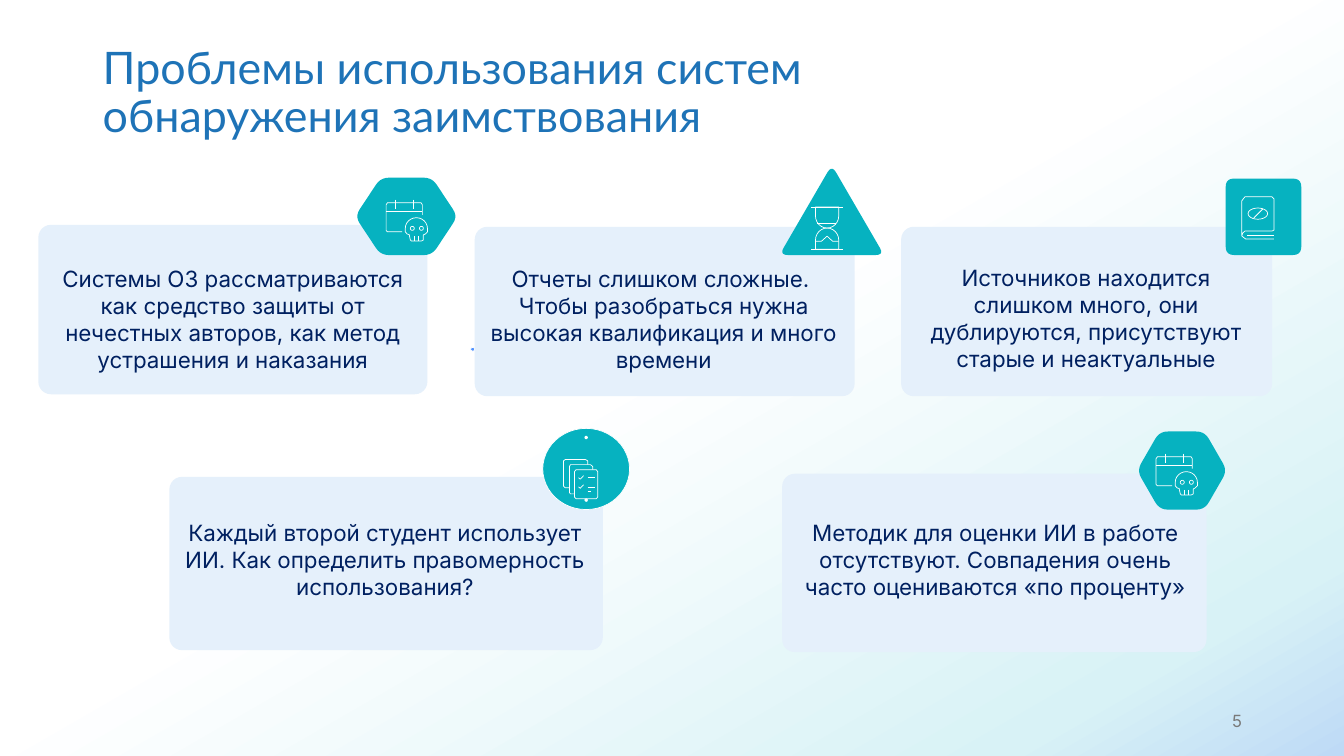
from dataclasses import dataclass
from math import cos, dist, radians, sin
from typing import NamedTuple

from pptx import Presentation
from pptx.dml.color import RGBColor
from pptx.enum.shapes import MSO_SHAPE
from pptx.enum.text import MSO_ANCHOR, PP_ALIGN
from pptx.oxml import parse_xml
from pptx.oxml.ns import nsdecls
from pptx.util import Pt

Point = tuple[float, float]
Stroke = list[Point]


@dataclass(frozen=True)
class Theme:
    title: str = "1E73B7"
    text: str = "002060"
    card: str = "E5F0FB"
    badge: str = "06B2C0"
    dot: str = "4F92FF"
    number: str = "797979"
    white: str = "FFFFFF"
    title_font: str = "Lato"
    body_font: str = "Inter"
    title_size: float = 32
    body_size: float = 16
    number_size: float = 12
    line: float = 0.5
    # position in percent, colour, opacity in percent
    gradient: tuple = ((48, "FFFFFF", 100), (87, "D8F2F6", 71), (100, "BEDAF6", 100))
    gradient_angle: int = 60


class Box(NamedTuple):
    x: float
    y: float
    w: float
    h: float


@dataclass(frozen=True)
class Card:
    box: Box
    text_box: Box
    lines: tuple[str, ...]
    badge: str
    badge_box: Box
    icon: str
    icon_at: Point


def arc(cx: float, cy: float, rx: float, ry: float, start: int = 0, end: int = 360) -> Stroke:
    """Points of an elliptic arc, angles in degrees clockwise from the right."""
    step = 15 if end > start else -15
    return [(cx + rx * cos(radians(a)), cy + ry * sin(radians(a)))
            for a in range(start, end + step, step)]


THEME = Theme()
CORNER = 6
CARD_RADIUS = 9

# Corner points as fractions of the badge box; rounding pulls the tips back inside
BADGES: dict[str, Stroke] = {
    "hexagon": [(-0.02, 0.5), (0.24, 0), (0.76, 0), (1.02, 0.5), (0.76, 1), (0.24, 1)],
    "triangle": [(0.5, -0.04), (1.03, 1), (-0.03, 1)],
    "square": [(0, 0), (1, 0), (1, 1), (0, 1)],
}

ICONS: dict[str, list[Stroke]] = {
    "calendar": [
        [(11.5, 23), (1, 23), (0, 22), (0, 3.6), (1, 2.2), (24.9, 2.2), (25.9, 3.6), (25.9, 10.8)],
        *([(x, 0), (x, 6.5)] for x in (6.5, 19.4)),
        [(0, 8.6), (25.9, 8.6)],
        *(arc(x, 20.5, 1.4, 1.4) for x in (18.7, 25.2)),
        *([(x, 25.9), (x, 29.5)] for x in (20.2, 23)),
        arc(21.6, 20.5, 7.9, 7.6, 0, -180)
        + [(13.7, 23), (15, 24.5), (16.5, 25), (17.3, 28.8), (18, 29.5), (25.2, 29.5),
           (26.6, 28.8), (26.6, 25.2), (28, 24.5), (29.5, 23), (29.5, 20.5)],
    ],
    "hourglass": [
        arc(11.2, 6.5, 8.3, 8.6, 0, 180) + [(2.9, 0), (19.5, 0), (19.5, 6.5)],
        arc(11.2, 23.7, 8.3, 8.6, 0, -180) + [(2.9, 30.2), (19.5, 30.2), (19.5, 23.7)],
        *([(0, y), (22.3, y)] for y in (0, 30.2)),
        [(19.4, 24.5), (15.1, 24.5), (11.2, 20.9), (7.2, 24.5), (2.9, 24.5)],
        [(4.3, 11.5), (17.3, 11.5)],
    ],
    "book": [
        [(23, 30.2), (2.9, 30.2), (0, 28), (0.7, 25.9), (2.2, 24.5), (21.6, 24.5), (23, 23.8),
         (23, 1.4), (21.6, 0), (2.2, 0), (0, 2.9), (0, 27.4)],
        [(3.6, 27.4), (23, 27.4)],
        arc(11.5, 12, 7, 4),
        [(8.6, 15.1), (15.1, 8.6)],
    ],
    "checklists": [
        [(4.3, 20.2), (1.4, 20.2), (0, 19), (0, 0.9), (1.3, 0), (15.8, 0), (17.3, 0.9), (17.3, 3.6)],
        [(7.9, 24.5), (5, 24.5), (4.3, 23.5), (4.3, 5), (5, 3.6), (19.4, 3.6), (20.9, 5), (20.9, 7.2)],
        [(9, 7.2), (23.4, 7.2), (24.5, 8.6), (24.5, 26.7), (23.4, 28), (9, 28), (7.9, 26.7),
         (7.9, 8.6), (9, 7.2)],
        *([(10.8, y), (12, y + 1), (14.4, y - 1.5)] for y in (13, 19.5)),
        *([(17.3, y), (x, y)] for x, y in ((22.3, 13), (22.3, 19.5), (19.4, 23))),
    ],
}

CARDS = [
    Card(Box(27.4, 160.6, 277.9, 121), Box(33.1, 189.4, 266.4, 77.8),
         ("Системы ОЗ рассматриваются как средство защиты от нечестных авторов, "
          "как метод устрашения и наказания",),
         "hexagon", Box(255, 126.9, 70.5, 55.3), "calendar", (275.8, 142.6)),
    Card(Box(339.1, 162, 271.4, 121), Box(346.3, 189.4, 255.6, 79.9),
         ("Отчеты слишком сложные. ",
          "Чтобы разобраться нужна высокая квалификация и много времени"),
         "triangle", Box(558.9, 120.4, 70.5, 61.8), "hourglass", (579.6, 147.8)),
    Card(Box(643.7, 162, 265, 121), Box(650.9, 188.6, 249.8, 77.8),
         ("Источников находится слишком много, они дублируются, присутствуют "
          "старые и неактуальные",),
         "square", Box(875.5, 127.6, 54, 54.6), "book", (887, 140.6)),
    Card(Box(121, 340.6, 309.6, 123.8), Box(123.1, 370.8, 303.8, 58.3),
         ("Каждый второй студент использует ИИ. Как определить правомерность "
          "использования?",),
         "circle", Box(387.7, 306, 62, 58), "checklists", (402.5, 328.3)),
    Card(Box(558.7, 338.4, 303.1, 127.4), Box(566.6, 370.8, 288.7, 90.7),
         ("Методик для оценки ИИ в работе отсутствуют. Совпадения очень часто "
          "оцениваются «по проценту»",),
         "hexagon", Box(813.4, 308.2, 61.9, 55.8), "calendar", (825.8, 324)),
]


def rgb(color: str) -> RGBColor:
    return RGBColor.from_string(color)


def style(sp, fill: str | None = None, line: str | None = None) -> None:
    sp.shadow.inherit = False
    if fill:
        sp.fill.solid()
        sp.fill.fore_color.rgb = rgb(fill)
    else:
        sp.fill.background()
    if line:
        sp.line.color.rgb = rgb(line)
        sp.line.width = Pt(THEME.line)
    else:
        sp.line.fill.background()


def add_preset(s, kind: MSO_SHAPE, box: Box, fill: str, line: str | None = None):
    sp = s.shapes.add_shape(kind, *map(Pt, box))
    style(sp, fill, line)
    return sp


def add_outline(s, strokes: list[Stroke], at: Point, closed: bool = False):
    paths = [[(Pt(at[0] + x), Pt(at[1] + y)) for x, y in stroke] for stroke in strokes]
    builder = s.shapes.build_freeform(*paths[0][0], scale=1.0)
    for i, path in enumerate(paths):
        if i:
            builder.move_to(*path[0])
        builder.add_line_segments(path[1:], close=closed)
    return builder.convert_to_shape()


def rounded(corners: Stroke) -> Stroke:
    """Replace each corner of a polygon by a short quadratic curve."""
    points = []
    for i, (x, y) in enumerate(corners):
        ends = []
        for nx, ny in (corners[i - 1], corners[(i + 1) % len(corners)]):
            k = CORNER / dist((x, y), (nx, ny))
            ends.append((x + (nx - x) * k, y + (ny - y) * k))
        (ax, ay), (bx, by) = ends
        for t in (0, 0.2, 0.4, 0.6, 0.8, 1):
            u = 1 - t
            points.append((u * u * ax + 2 * u * t * x + t * t * bx,
                           u * u * ay + 2 * u * t * y + t * t * by))
    return points


def write(sp, box: Box, lines: tuple[str, ...], font: str, size: float, color: str,
          align: PP_ALIGN, anchor: MSO_ANCHOR = MSO_ANCHOR.TOP, inset: Point = (0, 0)):
    sp.left, sp.top, sp.width, sp.height = map(Pt, box)
    tf = sp.text_frame
    tf.word_wrap = True
    tf.vertical_anchor = anchor
    tf.margin_left = tf.margin_right = Pt(inset[0])
    tf.margin_top = tf.margin_bottom = Pt(inset[1])
    p = tf.paragraphs[0]
    p.alignment = align
    for i, line in enumerate(lines):
        if i:
            p.add_line_break()
        r = p.add_run()
        r.text = line
        r.font.name, r.font.size, r.font.color.rgb = font, Pt(size), rgb(color)
    return p


def add_badge(s, card: Card) -> None:
    x, y, w, h = card.badge_box
    if card.badge == "circle":
        add_preset(s, MSO_SHAPE.OVAL, card.badge_box, THEME.badge, THEME.white)
        for dot_y in (y + 5.3, y + 50):
            add_preset(s, MSO_SHAPE.OVAL, Box(x + w / 2 - 1.2, dot_y, 2.4, 2.4), THEME.white)
    else:
        corners = [(fx * w, fy * h) for fx, fy in BADGES[card.badge]]
        style(add_outline(s, [rounded(corners)], (x, y), closed=True), THEME.badge)
    style(add_outline(s, ICONS[card.icon], card.icon_at), line=THEME.white)


def add_card(s, card: Card) -> None:
    sp = add_preset(s, MSO_SHAPE.ROUNDED_RECTANGLE, card.box, THEME.card)
    sp.adjustments[0] = CARD_RADIUS / card.box.h
    write(s.shapes.add_textbox(0, 0, 0, 0), card.text_box, card.lines, THEME.body_font,
          THEME.body_size, THEME.text, PP_ALIGN.CENTER)
    add_badge(s, card)


def set_background(s) -> None:
    stops = "".join(
        f'<a:gs pos="{pos * 1000}"><a:srgbClr val="{color}">'
        f'<a:alpha val="{alpha * 1000}"/></a:srgbClr></a:gs>'
        for pos, color, alpha in THEME.gradient)
    s.element.cSld.insert(0, parse_xml(
        f'<p:bg {nsdecls("p", "a")}><p:bgPr><a:gradFill><a:gsLst>{stops}</a:gsLst>'
        f'<a:lin ang="{THEME.gradient_angle * 60000}" scaled="0"/></a:gradFill>'
        '<a:effectLst/></p:bgPr></p:bg>'))


def main() -> None:
    prs = Presentation()
    prs.slide_width, prs.slide_height = Pt(960), Pt(540)
    s = prs.slides.add_slide(prs.slide_layouts[5])
    set_background(s)
    p = write(s.shapes.title, Box(66.2, 28.8, 662.4, 115.2),
              ("Проблемы использования систем обнаружения заимствования",),
              THEME.title_font, THEME.title_size, THEME.title, PP_ALIGN.LEFT, inset=(7.2, 3.6))
    p.line_spacing = 0.9
    add_preset(s, MSO_SHAPE.OVAL, Box(336.2, 248.2, 2.9, 2.6), THEME.dot, THEME.white)
    for card in CARDS:
        add_card(s, card)
    write(s.shapes.add_textbox(0, 0, 0, 0), Box(823.7, 500.4, 70.6, 28.8), ("5",),
          THEME.body_font, THEME.number_size, THEME.number, PP_ALIGN.RIGHT,
          MSO_ANCHOR.MIDDLE, (7.2, 3.6))
    prs.save("out.pptx")


if __name__ == "__main__":
    main()
